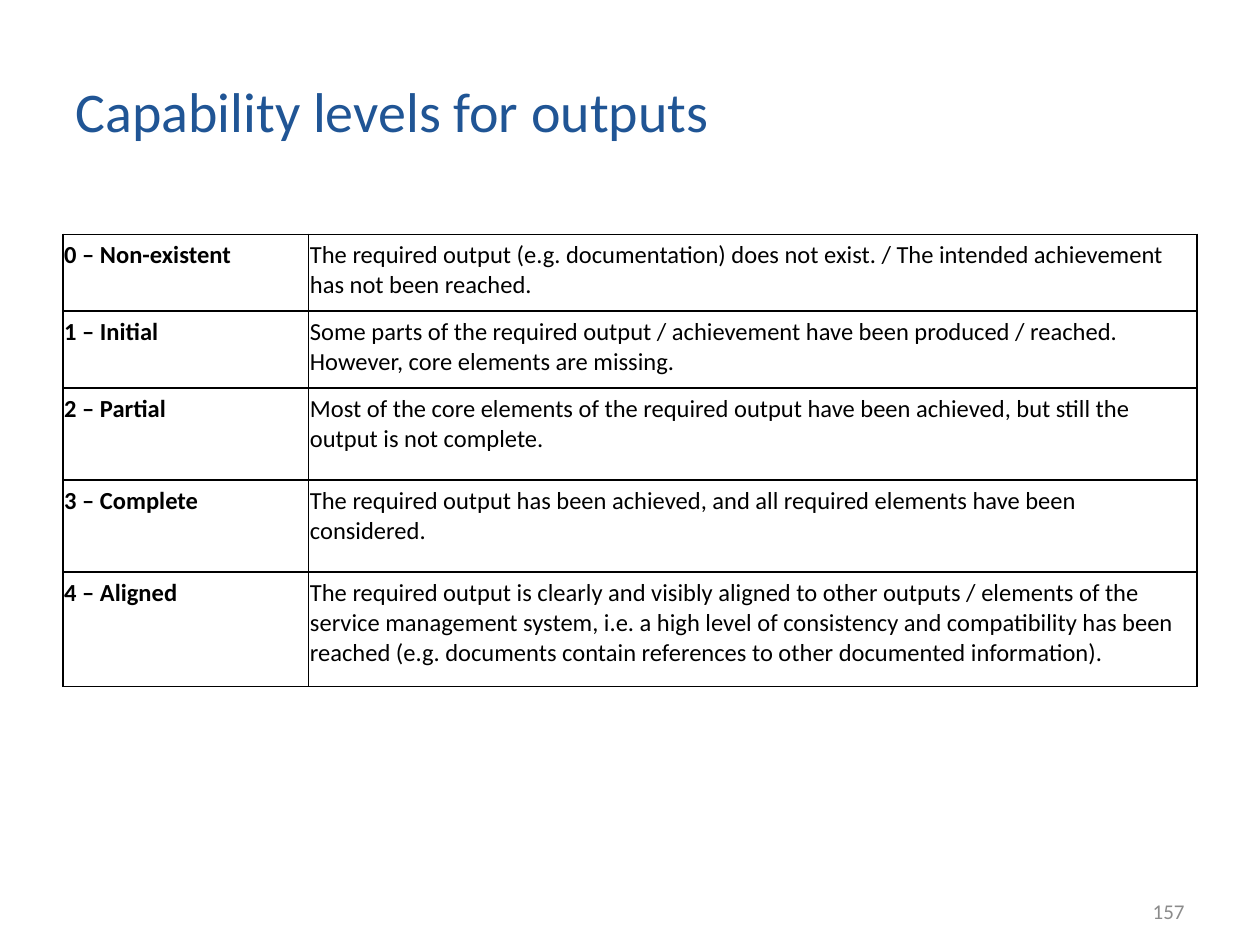
from typing import NamedTuple

from lxml import etree
from pptx import Presentation
from pptx.dml.color import RGBColor
from pptx.enum.text import MSO_ANCHOR, PP_ALIGN
from pptx.oxml.ns import qn
from pptx.util import Inches, Pt

MIDDLE, TOP = MSO_ANCHOR.MIDDLE, MSO_ANCHOR.TOP
LEFT, RIGHT = PP_ALIGN.LEFT, PP_ALIGN.RIGHT
TITLE_ONLY = 5
FONT = "Calibri"
BLUE, GREY, BLACK = "205595", "8B8B8B", "000000"
SLIDE_WIDTH, SLIDE_HEIGHT = 10, 7.5
MARGIN = SLIDE_WIDTH * 0.05
TABLE_TOP = 1.86
COLUMN_WIDTHS = (1.95, 7.05)
BORDER_POINTS = 1


class Level(NamedTuple):
    name: str
    meaning: str
    height: float


LEVELS = (
    Level("Non-existent", "The required output (e.g. documentation) does not exist. / "
          "The intended achievement has not been reached.", 0.61),
    Level("Initial", "Some parts of the required output / achievement have been produced / reached. "
          "However, core elements are missing.", 0.61),
    Level("Partial", "Most of the core elements of the required output have been achieved, "
          "but still the output is not complete.", 0.73),
    Level("Complete", "The required output has been achieved, "
          "and all required elements have been considered.", 0.73),
    Level("Aligned", "The required output is clearly and visibly aligned to other outputs / elements "
          "of the service management system, i.e. a high level of consistency and compatibility "
          "has been reached (e.g. documents contain references to other documented information).", 0.91),
)


def write(frame, text: str, size: float, color: str, align=LEFT, bold: bool = False) -> None:
    frame.word_wrap = True
    para = frame.paragraphs[0]
    para.text = text
    para.alignment = align
    font = para.font
    font.name, font.size, font.bold = FONT, Pt(size), bold
    font.color.rgb = RGBColor.from_string(color)


def place(shape, left: float, top: float, width: float, height: float) -> None:
    shape.left, shape.top = Inches(left), Inches(top)
    shape.width, shape.height = Inches(width), Inches(height)


def add_borders(cell) -> None:
    properties = cell._tc.get_or_add_tcPr()
    for index, side in enumerate(("lnL", "lnR", "lnT", "lnB")):
        line = etree.Element(qn(f"a:{side}"), w=str(Pt(BORDER_POINTS)))
        fill = etree.SubElement(line, qn("a:solidFill"))
        etree.SubElement(fill, qn("a:srgbClr"), val=BLACK)
        properties.insert(index, line)


def fill_cell(cell, text: str, bold: bool) -> None:
    cell.margin_left = cell.margin_right = Inches(0.01)
    cell.margin_top = cell.margin_bottom = Inches(0.05)
    cell.vertical_anchor = TOP
    cell.fill.background()
    write(cell.text_frame, text, 14, BLACK, bold=bold)
    add_borders(cell)


def add_level_table(slide) -> None:
    frame = slide.shapes.add_table(
        len(LEVELS), len(COLUMN_WIDTHS), Inches(MARGIN), Inches(TABLE_TOP),
        Inches(sum(COLUMN_WIDTHS)), Inches(sum(level.height for level in LEVELS)))
    table = frame.table
    table.first_row = table.horz_banding = False
    for column, width in zip(table.columns, COLUMN_WIDTHS):
        column.width = Inches(width)
    for number, level in enumerate(LEVELS):
        table.rows[number].height = Inches(level.height)
        fill_cell(table.cell(number, 0), f"{number} – {level.name}", bold=True)
        fill_cell(table.cell(number, 1), level.meaning, bold=False)


def main() -> None:
    deck = Presentation()
    deck.slide_width, deck.slide_height = Inches(SLIDE_WIDTH), Inches(SLIDE_HEIGHT)
    slide = deck.slides.add_slide(deck.slide_layouts[TITLE_ONLY])

    title = slide.shapes.title
    place(title, MARGIN, 0.3, 8.04, 1.15)
    title.text_frame.vertical_anchor = MIDDLE
    write(title.text_frame, "Capability levels for outputs", 32, BLUE)

    number_width = 2.33
    page_number = slide.shapes.add_textbox(0, 0, 0, 0)
    place(page_number, SLIDE_WIDTH - MARGIN - number_width, 7.03, number_width, 0.4)
    page_number.text_frame.vertical_anchor = MIDDLE
    write(page_number.text_frame, "157", 12, GREY, RIGHT)

    add_level_table(slide)
    deck.save("out.pptx")


if __name__ == "__main__":
    main()
